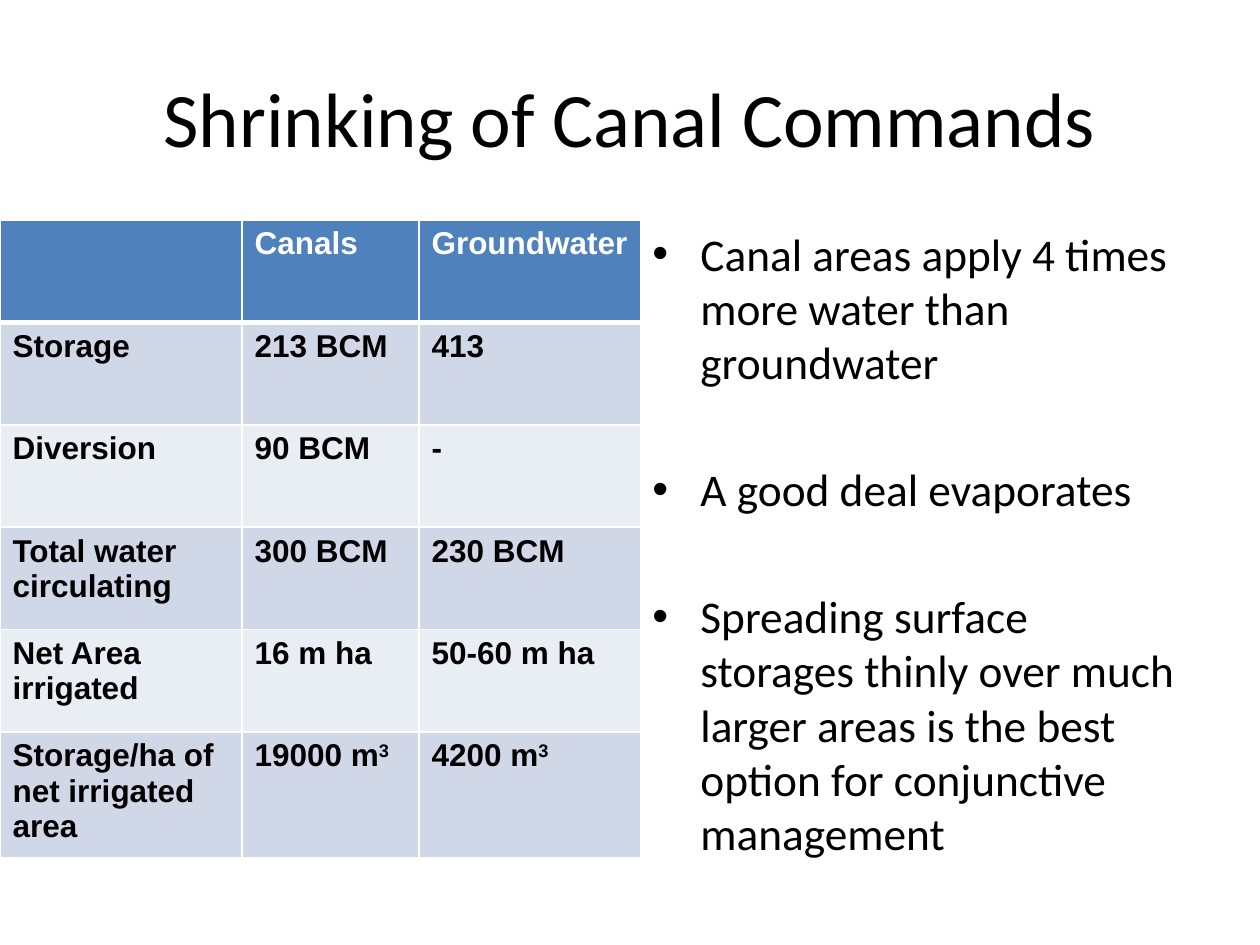
from lxml import etree
from pptx import Presentation
from pptx.dml.color import RGBColor as RGB
from pptx.enum.text import MSO_ANCHOR as Anchor, PP_ALIGN as Align
from pptx.oxml.ns import qn
from pptx.util import Pt

COLORS = {"text": "000000", "white": "FFFFFF", "header": "4F81BD",
          "odd": "D0D8E8", "even": "E9EDF4"}
EMU_PER_PX = 914400 / 126


def px(n):
    return round(n * EMU_PER_PX)


def add_run(paragraph, text, font, size, color="text", bold=False):
    run = paragraph.add_run()
    run.text = text
    run.font.name = font
    run.font.size = Pt(size)
    run.font.bold = bold
    run.font.color.rgb = RGB.from_string(COLORS[color])
    return run


deck = Presentation()
deck.slide_width, deck.slide_height = px(1260), px(945)
slide = deck.slides.add_slide(deck.slide_layouts[6])

# Title
title = slide.shapes.add_textbox(px(63), px(38), px(1134), px(157)).text_frame
title.word_wrap = True
title.vertical_anchor = Anchor.MIDDLE
title.paragraphs[0].alignment = Align.CENTER
add_run(title.paragraphs[0], "Shrinking of Canal Commands", "Calibri", 44)

# Canal and groundwater table; text after ^ is superscript
ROWS = [
    ["", "Canals", "Groundwater"],
    ["Storage", "213 BCM", "413"],
    ["Diversion", "90 BCM", "-"],
    ["Total water circulating", "300 BCM", "230 BCM"],
    ["Net Area irrigated", "16 m ha", "50-60 m ha"],
    ["Storage/ha of net irrigated area", "19000 m^3", "4200 m^3"],
]
WIDTHS = [242, 177, 222]
water = slide.shapes.add_table(len(ROWS), len(WIDTHS), 0, px(220),
                               px(sum(WIDTHS)), px(630)).table
for column, width in zip(water.columns, WIDTHS):
    column.width = px(width)

for r, values in enumerate(ROWS):
    water.rows[r].height = px(118) if r == len(ROWS) - 1 else px(512) // 5
    band = "header" if r == 0 else "odd" if r % 2 else "even"
    for c, value in enumerate(values):
        cell = water.cell(r, c)
        cell.margin_right = px(10)

        # White borders, thicker under the header
        props = cell._tc.get_or_add_tcPr()
        for side in ("lnL", "lnR", "lnT", "lnB"):
            thick = (r, side) in [(0, "lnB"), (1, "lnT")]
            border = etree.SubElement(props, qn("a:" + side), w=str(Pt(3 if thick else 1)))
            paint = etree.SubElement(border, qn("a:solidFill"))
            etree.SubElement(paint, qn("a:srgbClr"), val=COLORS["white"])
        cell.fill.solid()
        cell.fill.fore_color.rgb = RGB.from_string(COLORS[band])

        base, _, power = value.partition("^")
        line = cell.text_frame.paragraphs[0]
        if base:
            add_run(line, base, "Arial", 18, "text" if r else "white", bold=True)
        if power:
            exponent = add_run(line, power, "Arial", 18, bold=True)
            exponent.font._element.set("baseline", "30000")

# Bulleted remarks
REMARKS = [
    "Canal areas apply 4 times more water than groundwater",
    "A good deal evaporates",
    "Spreading surface storages thinly over much larger areas is the best "
    "option for conjunctive management",
]
remarks = slide.shapes.add_textbox(px(640), px(220), px(557), px(624)).text_frame
remarks.word_wrap = True
for i, remark in enumerate(REMARKS):
    point = remarks.paragraphs[0] if i == 0 else remarks.add_paragraph()
    point.line_spacing = Pt(31)
    point.space_before = Pt(41.5 if i else 0)
    add_run(point, remark, "Calibri", 25.9)
    layout = point._p.get_or_add_pPr()
    layout.set("marL", str(px(48)))
    layout.set("indent", str(px(-48)))
    etree.SubElement(layout, qn("a:buFont"), typeface="Arial")
    etree.SubElement(layout, qn("a:buChar"), char="•")

deck.save("out.pptx")
